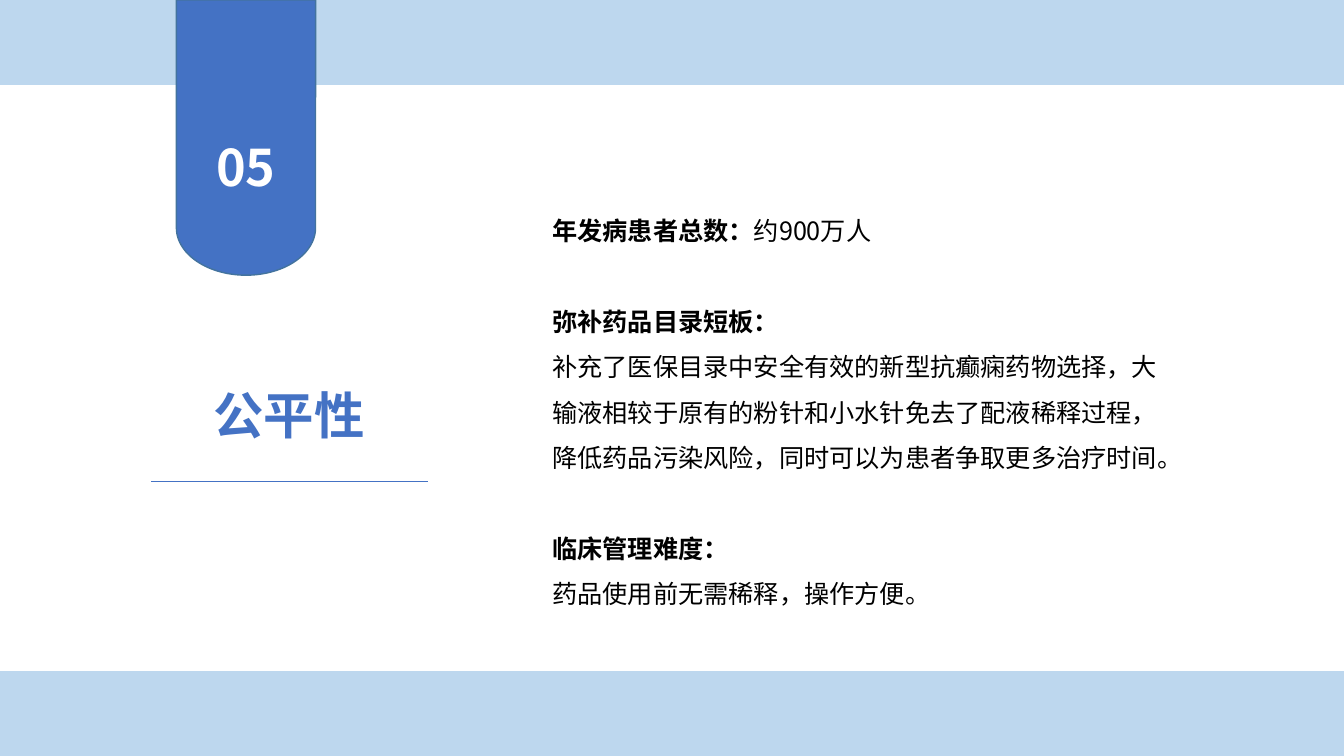
import math
from lxml import etree
from pptx import Presentation, util as u
from pptx.dml.color import RGBColor
from pptx.enum import shapes, text
from pptx.oxml.ns import qn

# Content
NUMBER = "05"
TITLE = "公平性"
# Each paragraph: (space before, [(text, bold), ...])
GAP = 32.4
BODY = [
    (0, [("年发病患者总数：", True), ("约900万人", False)]),
    (GAP, [("弥补药品目录短板：", True)]),
    (0, [("补充了医保目录中安全有效的新型抗癫痫药物选择，大输液相较于原有的粉针和小水针"
          "免去了配液稀释过程，降低药品污染风险，同时可以为患者争取更多治疗时间。", False)]),
    (GAP, [("临床管理难度：", True)]),
    (0, [("药品使用前无需稀释，操作方便。", False)]),
]
COLORS = {"band": "BDD7EE", "blue": "4472C4", "edge": "43739E",
          "white": "FFFFFF", "black": "000000"}
CJK = "Noto Sans CJK SC"
W, H, BAND_H = 960, 540, 60

prs = Presentation()
prs.slide_width, prs.slide_height = u.Pt(W), u.Pt(H)
s = prs.slides.add_slide(prs.slide_layouts[6])


def rgb(name):
    return RGBColor.from_string(COLORS[name])


def paint(sp, fill, line):
    sp.shadow.inherit = False
    sp.fill.solid()
    sp.fill.fore_color.rgb = rgb(fill)
    sp.line.color.rgb = rgb(line)
    sp.line.width = u.Pt(1)


def add_text(paras, box, size, color, font=CJK, align=text.PP_ALIGN.LEFT,
             spacing=1.0, wrap=True):
    sp = s.shapes.add_textbox(*map(u.Pt, box))
    tf = sp.text_frame
    tf.word_wrap = wrap
    for i, (before, runs) in enumerate(paras):
        p = tf.paragraphs[0] if i == 0 else tf.add_paragraph()
        p.alignment, p.line_spacing = align, spacing
        p.space_before = u.Pt(before)
        for words, bold in runs:
            r = p.add_run()
            r.text = words
            f = r.font
            f.size, f.bold, f.name = u.Pt(size), bold, font
            f.color.rgb = rgb(color)
            etree.SubElement(r._r.get_or_add_rPr(), qn("a:ea")).set("typeface", CJK)
    return sp


# Bands at top and bottom
for top in (0, H - BAND_H):
    sp = s.shapes.add_shape(shapes.MSO_SHAPE.RECTANGLE,
                            u.Pt(0), u.Pt(top), u.Pt(W), u.Pt(BAND_H))
    paint(sp, "band", "band")

# Hanging tab: straight sides closed by half an ellipse
left, right, side, depth = 126, 225.4, 162.7, 33.9
cx, rx = (left + right) / 2, (right - left) / 2
arc = [(cx + rx * math.cos(math.radians(a)), side + depth * math.sin(math.radians(a)))
       for a in range(0, 181, 3)]
fb = s.shapes.build_freeform(u.Pt(left), u.Pt(0))
fb.add_line_segments([(u.Pt(x), u.Pt(y)) for x, y in [(right, 0)] + arc], close=True)
paint(fb.convert_to_shape(), "blue", "edge")

# Section number and title
center = text.PP_ALIGN.CENTER
add_text([(0, [(NUMBER, True)])], (144.6, 93.6, 62, 51), 36, "white", align=center)
add_text([(0, [(TITLE, True)])], (145.4, 270.7, 122.4, 51), 36, "blue",
         font="Calibri", align=center, wrap=False)

# Rule under the title
ln = s.shapes.add_connector(shapes.MSO_CONNECTOR.STRAIGHT,
                            u.Pt(108), u.Pt(344), u.Pt(305.5), u.Pt(344))
ln.line.color.rgb = rgb("blue")
ln.line.width = u.Pt(0.5)
etree.SubElement(ln._element.spPr, qn("a:effectLst"))

# Body
add_text(BODY, (387.4, 139.7, 460.8, 301.7), 18, "black", spacing=1.5)

prs.save("out.pptx")
